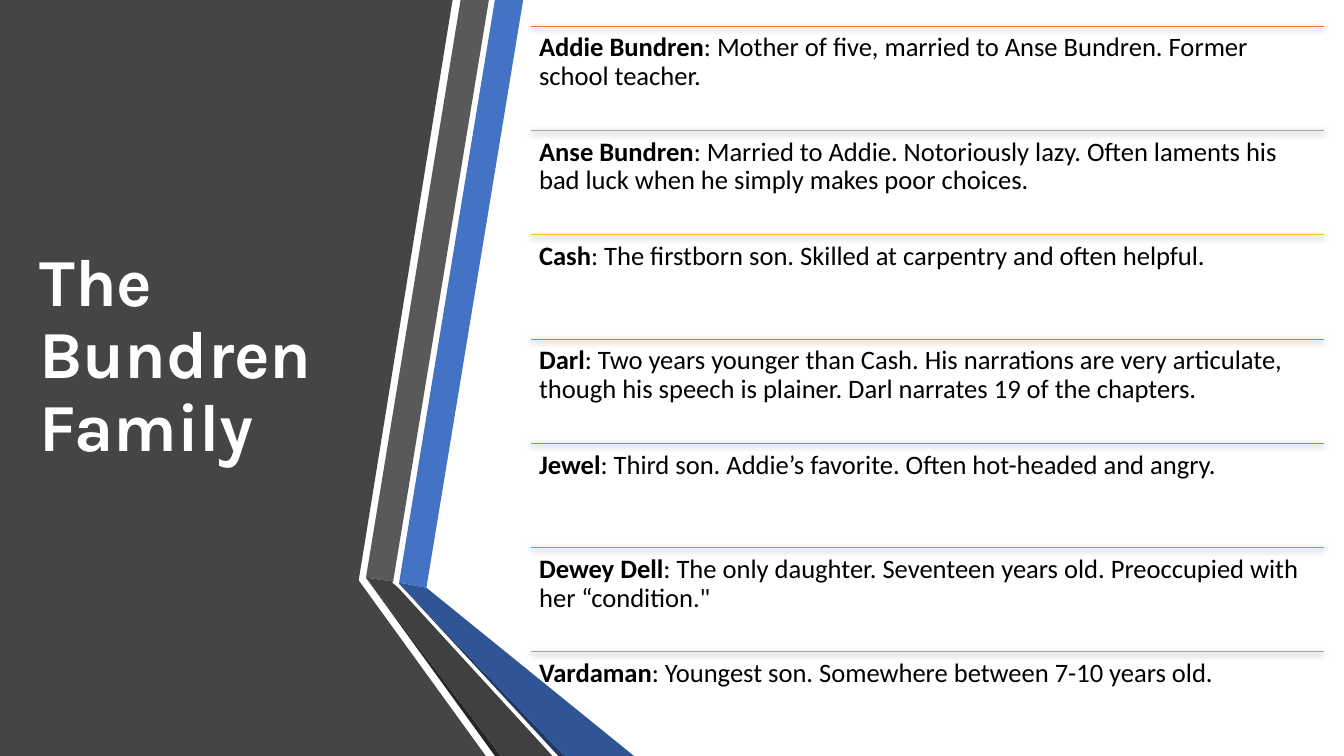
from typing import NamedTuple

from lxml import etree
from pptx import Presentation
from pptx.dml.color import RGBColor
from pptx.enum.dml import MSO_THEME_COLOR
from pptx.enum.shapes import MSO_CONNECTOR
from pptx.enum.text import MSO_ANCHOR, MSO_AUTO_SIZE, PP_ALIGN
from pptx.oxml import parse_xml
from pptx.oxml.ns import nsdecls
from pptx.shapes.connector import Connector
from pptx.slide import Slide
from pptx.text.text import TextFrame
from pptx.util import Pt

STRAIGHT = MSO_CONNECTOR.STRAIGHT
TOP, MIDDLE = MSO_ANCHOR.TOP, MSO_ANCHOR.MIDDLE
FIXED = MSO_AUTO_SIZE.NONE
LEFT = PP_ALIGN.LEFT
NO_THEME = MSO_THEME_COLOR.NOT_THEME_COLOR

ROW_X, ROW_Y = 379.4, 18.6
ROW_W, ROW_H = 566, 74.5


class Band(NamedTuple):
    color: str
    points: list[tuple[float, float]]


class Person(NamedTuple):
    name: str
    about: str
    color: str


BANDS = [
    Band("454545", [(0, 0), (323.3, 0), (256.3, 414), (256.3, 414.7),
                    (347, 540), (0, 540)]),
    Band("4472C4", [(285.1, 416.2), (304.6, 419.8), (373.7, 0), (353.5, 0)]),
    Band("595959", [(349.2, 0), (329, 0), (261.4, 412.6), (280.8, 415.4)]),
    Band("262626", [(261.4, 412.6), (353.5, 540), (357.8, 540)]),
    Band("203864", [(285.1, 416.9), (398.9, 540), (403.2, 540)]),
    Band("2F5597", [(285.1, 416.9), (403.2, 540), (452.9, 540),
                    (304.6, 419.8), (285.1, 416.2)]),
    Band("404040", [(394.6, 540), (284.4, 419.8), (280.1, 416.2),
                    (280.8, 415.4), (261.4, 412.6), (357.8, 540)]),
]

FAMILY = [
    Person("Addie Bundren", "Mother of five, married to Anse Bundren. "
           "Former school teacher.", "ED7D31"),
    Person("Anse Bundren", "Married to Addie. Notoriously lazy. Often laments "
           "his bad luck when he simply makes poor choices.", "A5A5A5"),
    Person("Cash", "The firstborn son. Skilled at carpentry and often "
           "helpful.", "FFC000"),
    Person("Darl", "Two years younger than Cash. His narrations are very "
           "articulate, though his speech is plainer. Darl narrates 19 of "
           "the chapters.", "5B9BD5"),
    Person("Jewel", "Third son. Addie’s favorite. Often hot-headed and "
           "angry.", "70AD47"),
    Person("Dewey Dell", "The only daughter. Seventeen years old. "
           "Preoccupied with her “condition.\"", "ED7D31"),
    Person("Vardaman", "Youngest son. Somewhere between 7-10 years old.",
           "A5A5A5"),
]


def rgb(color: str) -> RGBColor:
    return RGBColor.from_string(color)


def write(frame: TextFrame, lead: str, rest: str = "", *, size: float,
          font: str, color: str, anchor: MSO_ANCHOR,
          inset: tuple[float, float]) -> None:
    frame.word_wrap = True
    frame.auto_size = FIXED
    frame.vertical_anchor = anchor
    frame.margin_left = frame.margin_right = Pt(inset[0])
    frame.margin_top = frame.margin_bottom = Pt(inset[1])
    para = frame.paragraphs[0]
    para.alignment = LEFT
    para.line_spacing = 0.9
    for text, bold in ((lead, True), (rest, False)):
        if text:
            run = para.add_run()
            run.text = text
            run.font.size = Pt(size)
            run.font.name = font
            run.font.bold = bold
            run.font.color.rgb = rgb(color)


def draw_band(slide: Slide, band: Band) -> None:
    first, *others = [(Pt(x), Pt(y)) for x, y in band.points]
    path = slide.shapes.build_freeform(*first, scale=1.0)
    path.add_line_segments(others, close=True)
    shape = path.convert_to_shape()
    shape.shadow.inherit = False
    shape.fill.solid()
    shape.fill.fore_color.rgb = rgb(band.color)
    shape.line.fill.background()


def add_shade(line: Connector) -> None:
    effect = parse_xml(f"<a:effectLst {nsdecls('a')}/>")
    shade = etree.SubElement(
        effect, effect.tag.replace("effectLst", "outerShdw"),
        blurRad=str(Pt(4.5)), dist=str(Pt(1.5)), dir="5400000",
        algn="ctr", rotWithShape="0")
    tint = etree.SubElement(
        shade, effect.tag.replace("effectLst", "srgbClr"), val="000000")
    etree.SubElement(
        tint, effect.tag.replace("effectLst", "alpha"), val="63000")
    line.element.spPr.append(effect)


def draw_row(slide: Slide, person: Person, top: float) -> None:
    line = slide.shapes.add_connector(
        STRAIGHT, Pt(ROW_X), Pt(top), Pt(ROW_X + ROW_W), Pt(top))
    line.line.color.rgb = rgb(person.color)
    line.line.width = Pt(0.5)
    add_shade(line)
    box = slide.shapes.add_textbox(Pt(ROW_X), Pt(top), Pt(ROW_W), Pt(ROW_H))
    write(box.text_frame, person.name, f": {person.about}", size=19,
          font="Calibri", color="000000", anchor=TOP, inset=(5.7, 5.7))


def draw_title(slide: Slide, text: str) -> None:
    title = slide.shapes.title
    title.left, title.top = Pt(20.9), Pt(54)
    title.width, title.height = Pt(239), Pt(401.8)
    write(title.text_frame, text, size=48, font="Karla", color="FFFFFF",
          anchor=MIDDLE, inset=(7.2, 3.6))
    title.element.getparent().append(title.element)


def main() -> None:
    deck = Presentation()
    deck.slide_width, deck.slide_height = Pt(960), Pt(540)
    slide = deck.slides.add_slide(deck.slide_layouts[5])
    for band in BANDS:
        draw_band(slide, band)
    draw_title(slide, "The Bundren Family")
    for index, person in enumerate(FAMILY):
        draw_row(slide, person, ROW_Y + index * ROW_H)
    deck.save("out.pptx")


if __name__ == "__main__":
    main()
